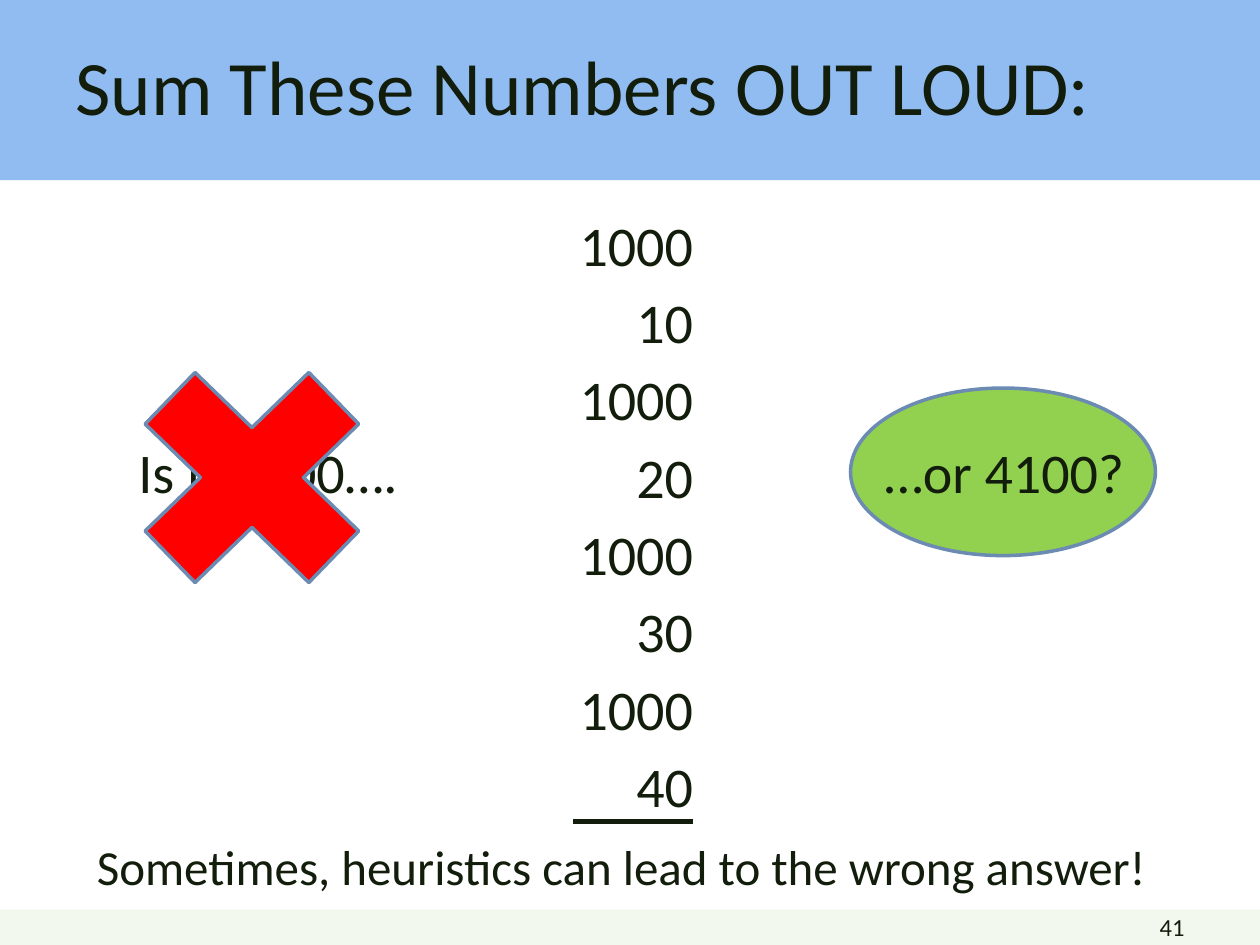
from pptx import Presentation
from pptx.dml.color import RGBColor
from pptx.enum.shapes import MSO_CONNECTOR, MSO_SHAPE as Shape
from pptx.enum.text import MSO_ANCHOR as Anchor, PP_ALIGN as Align
from pptx.util import Inches, Pt
from lxml.etree import SubElement
from pptx.oxml.ns import qn

BLUE = RGBColor(0x91, 0xBC, 0xF2)
PALE = RGBColor(0xF2, 0xF8, 0xED)
GREEN = RGBColor(0x92, 0xD0, 0x50)
RED = RGBColor(0xFF, 0, 0)
EDGE = RGBColor(0x6B, 0x8B, 0xB3)
INK = RGBColor(0x12, 0x1D, 0x0B)

TITLE = "Sum These Numbers OUT LOUD:"
ADDENDS = [n for tens in (10, 20, 30, 40) for n in (1000, tens)]
BANDS = [((0, 0, 10, 1.43), BLUE), ((0, 7.22, 10, 0.28), PALE)]
# text, box, size
NOTES = [
    ("Is it 5000….", (1, 3.42, 2.28, 0.64), 32),
    ("…or 4100?", (6.92, 3.42, 2.13, 0.64), 32),
    ("Sometimes, heuristics can lead to the wrong answer!",
     (0.67, 6.59, 8.71, 0.57), 28),
]
OVAL = (6.75, 3.08, 2.42, 1.33)
CROSS = (0.75, 2.58, 2.5, 2.42)
COLUMN = (4.4, 1.62, 1.2, 5.04)
SUM_LINE = (4.55, 5.5, 6.52)  # left, right, height on the slide


def add_shape(slide, kind, box, fill, edge=None):
    shape = slide.shapes.add_shape(kind, *map(Inches, box))
    shape.shadow.inherit = False
    shape.fill.solid()
    shape.fill.fore_color.rgb = fill
    if edge is None:
        shape.line.fill.background()
    else:
        shape.line.color.rgb = edge
        shape.line.width = Pt(2)


def add_text(slide, text, box, size, align=Align.LEFT, anchor=Anchor.TOP,
             wrap=False, gap=0):
    frame = slide.shapes.add_textbox(*map(Inches, box)).text_frame
    frame.word_wrap = wrap
    frame.vertical_anchor = anchor
    frame.text = text
    for par in frame.paragraphs:
        par.alignment = align
        par.space_before = Pt(gap)
        font = par.runs[0].font
        font.name = "Calibri"
        font.size = Pt(size)
        font.color.rgb = INK


def add_rule(slide, left, right, y):
    rule = slide.shapes.add_connector(
        MSO_CONNECTOR.STRAIGHT, *map(Inches, (left, y, right, y)))
    rule.line.color.rgb = INK
    rule.line.width = Pt(2.5)
    SubElement(rule._element.spPr, qn("a:effectLst"))


def main():
    deck = Presentation()
    deck.slide_width, deck.slide_height = Inches(10), Inches(7.5)
    slide = deck.slides.add_slide(deck.slide_layouts[6])

    for box, fill in BANDS:
        add_shape(slide, Shape.RECTANGLE, box, fill)
    add_shape(slide, Shape.OVAL, OVAL, GREEN, EDGE)

    add_text(slide, TITLE, (0.5, 0.28, 9.07, 0.79), 44,
             anchor=Anchor.MIDDLE, wrap=True)
    add_text(slide, "\n".join(map(str, ADDENDS)), COLUMN, 32,
             align=Align.RIGHT, wrap=True, gap=5.75)
    add_rule(slide, *SUM_LINE)
    add_text(slide, "41", (7.17, 7.19, 2.33, 0.31), 14,
             align=Align.RIGHT, wrap=True)
    for text, box, size in NOTES:
        add_text(slide, text, box, size)

    add_shape(slide, Shape.MATH_MULTIPLY, CROSS, RED, EDGE)
    deck.save("out.pptx")


if __name__ == "__main__":
    main()
